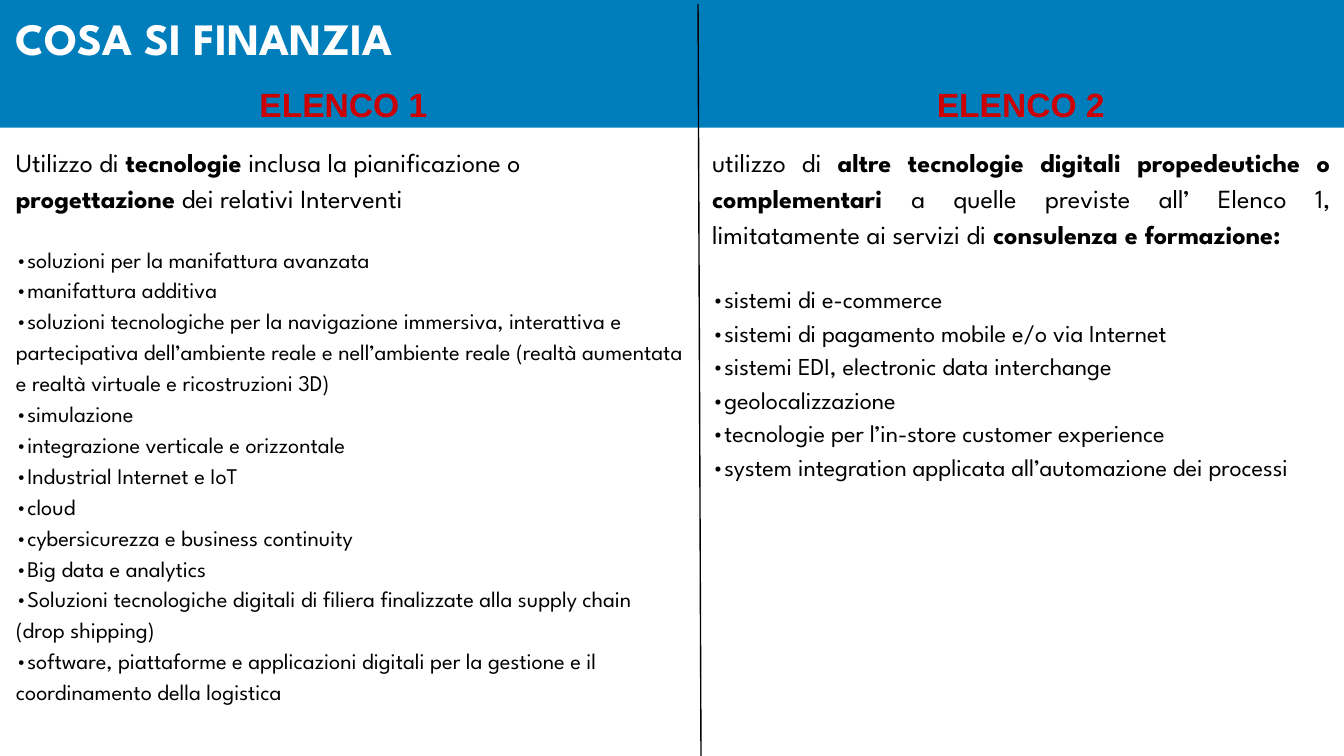
from dataclasses import dataclass

from lxml.etree import SubElement
from pptx import Presentation
from pptx.dml.color import RGBColor
from pptx.enum.shapes import MSO_CONNECTOR, MSO_SHAPE
from pptx.enum.text import PP_ALIGN
from pptx.oxml.ns import qn
from pptx.slide import Slide
from pptx.text.text import TextFrame, _Paragraph
from pptx.util import Inches, Pt

WIDTH = Inches(10)
HEIGHT = WIDTH * 9 // 16
BAND_HEIGHT = 16.9


@dataclass(frozen=True)
class Theme:
    """Colours, fonts and type sizes of the slide."""
    band: RGBColor = RGBColor(0x00, 0x7E, 0xBC)
    title: RGBColor = RGBColor(0xFF, 0xFF, 0xFF)
    heading: RGBColor = RGBColor(0xCC, 0x00, 0x00)
    ink: RGBColor = RGBColor(0x00, 0x00, 0x00)
    body_font: str = "League Spartan"
    heading_font: str = "Arial"
    title_size: int = 24
    heading_size: int = 18
    intro_size: int = 14
    first_items: int = 12
    second_items: int = 13


@dataclass(frozen=True)
class Box:
    """A rectangle in percent of the slide's width and height."""
    left: float
    top: float
    width: float
    height: float

    def emu(self) -> tuple[int, int, int, int]:
        """Return left, top, width and height as lengths."""
        return (int(WIDTH * self.left / 100), int(HEIGHT * self.top / 100),
                int(WIDTH * self.width / 100), int(HEIGHT * self.height / 100))


@dataclass(frozen=True)
class Style:
    """The look of a paragraph."""
    size: int
    color: RGBColor
    font: str
    align: PP_ALIGN = PP_ALIGN.LEFT
    spacing: float = 1.15


@dataclass(frozen=True)
class Column:
    """A list of financed items with its heading and introduction."""
    heading: str
    heading_box: Box
    body_box: Box
    intro: tuple[str, ...]
    align: PP_ALIGN
    gap: float
    item_size: int
    items: tuple[str, ...]


THEME = Theme()

COLUMNS = (
    Column("ELENCO 2", Box(52.4, 8.55, 47.1, 8.35), Box(52, BAND_HEIGHT, 48, 48.2),
           ("utilizzo di ",
            "altre tecnologie digitali propedeutiche o complementari ",
            "a quelle previste all’ Elenco 1, limitatamente ai servizi di ",
            "consulenza e formazione:"),
           PP_ALIGN.JUSTIFY, 16.5, THEME.second_items,
           ("sistemi di e-commerce",
            "sistemi di pagamento mobile e/o via Internet",
            "sistemi EDI, electronic data interchange",
            "geolocalizzazione",
            "tecnologie per l’in-store customer experience",
            "system integration applicata all’automazione dei processi")),
    Column("ELENCO 1 ", Box(0, 8.55, 51.8, 8.35), Box(0.2, BAND_HEIGHT, 51.8, 83.1),
           ("Utilizzo di ", "tecnologie", " inclusa la pianificazione o ",
            "progettazione", " dei relativi Interventi"),
           PP_ALIGN.LEFT, 15.2, THEME.first_items,
           ("soluzioni per la manifattura avanzata",
            "manifattura additiva",
            "soluzioni tecnologiche per la navigazione immersiva, interattiva e "
            "partecipativa dell’ambiente reale e nell’ambiente reale "
            "(realtà aumentata e realtà virtuale e ricostruzioni 3D)",
            "simulazione",
            "integrazione verticale e orizzontale",
            "Industrial Internet e IoT",
            "cloud",
            "cybersicurezza e business continuity",
            "Big data e analytics",
            "Soluzioni tecnologiche digitali di filiera finalizzate alla "
            "supply chain (drop shipping)",
            "software, piattaforme e applicazioni digitali per la gestione e il "
            "coordinamento della logistica")),
)


def add_text_frame(s: Slide, box: Box, inset: float = 0.1) -> TextFrame:
    """Add a wrapping text box and return its text frame."""
    tf = s.shapes.add_textbox(*box.emu()).text_frame
    tf.word_wrap = True
    tf.margin_left = tf.margin_right = Inches(0.1)
    tf.margin_top = tf.margin_bottom = Inches(inset)
    return tf


def write(p: _Paragraph, parts: tuple[str, ...], style: Style, first_bold: bool = False) -> None:
    """Write parts as runs that alternate between regular and bold."""
    p.alignment = style.align
    p.line_spacing = style.spacing
    for i, part in enumerate(parts):
        r = p.add_run()
        r.text = part
        r.font.name = style.font
        r.font.size = Pt(style.size)
        r.font.color.rgb = style.color
        r.font.bold = (i % 2 == 0) == first_bold


def add_column(s: Slide, column: Column) -> None:
    """Draw one column: heading, introduction and listed items."""
    heading = Style(THEME.heading_size, THEME.heading, THEME.heading_font, PP_ALIGN.CENTER)
    tf = add_text_frame(s, column.heading_box)
    write(tf.paragraphs[0], (column.heading,), heading, first_bold=True)

    tf = add_text_frame(s, column.body_box)
    intro = Style(THEME.intro_size, THEME.ink, THEME.body_font, column.align)
    write(tf.paragraphs[0], column.intro, intro)
    item_style = Style(column.item_size, THEME.ink, THEME.body_font)
    for item in column.items:
        write(tf.add_paragraph(), (f"•{item}",), item_style)
    tf.paragraphs[1].space_before = Pt(column.gap)


def add_band(s: Slide) -> None:
    """Draw the coloured band with the slide's title."""
    sp = s.shapes.add_shape(MSO_SHAPE.RECTANGLE, *Box(0, 0, 100, BAND_HEIGHT).emu())
    sp.shadow.inherit = False
    sp.fill.solid()
    sp.fill.fore_color.rgb = THEME.band
    sp.line.fill.background()
    title = Style(THEME.title_size, THEME.title, THEME.body_font, spacing=1.0)
    tf = add_text_frame(s, Box(0.2, 0.5, 73.5, 8.35), inset=0.05)
    write(tf.paragraphs[0], ("COSA SI FINANZIA",), title, first_bold=True)


def add_divider(s: Slide) -> None:
    """Draw the line between the two columns."""
    left, top, width, height = Box(51.94, 0.5, 0.22, 99.5).emu()
    line = s.shapes.add_connector(MSO_CONNECTOR.STRAIGHT, left, top, left + width, top + height)
    line.line.color.rgb = THEME.ink
    line.line.width = Pt(0.75)
    SubElement(line._element.spPr, qn("a:effectLst"))


def main() -> None:
    """Build the slide and save it."""
    prs = Presentation()
    prs.slide_width, prs.slide_height = WIDTH, HEIGHT
    s = prs.slides.add_slide(prs.slide_layouts[6])
    add_band(s)
    for column in COLUMNS:
        add_column(s, column)
    add_divider(s)
    prs.save("out.pptx")


if __name__ == "__main__":
    main()
